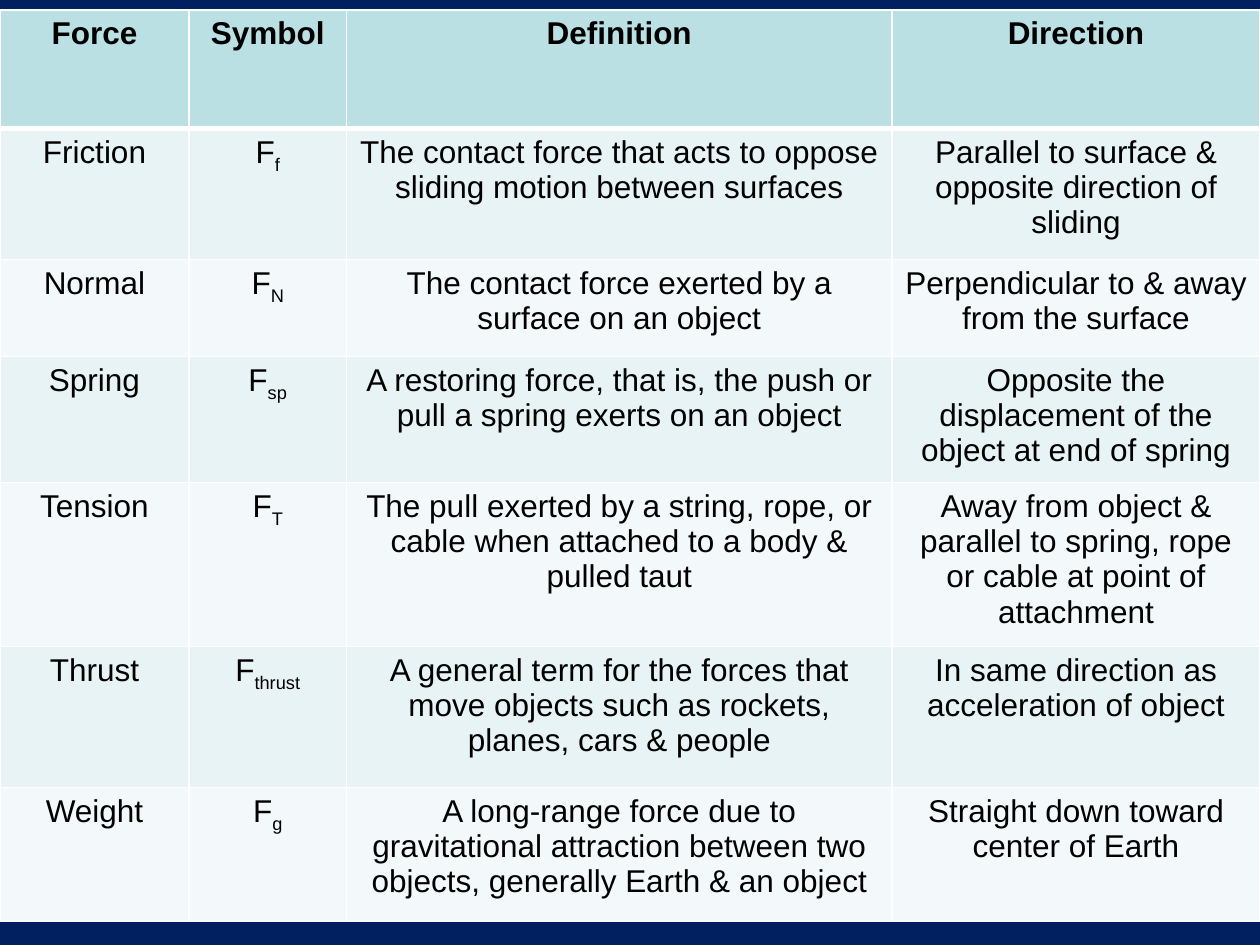
from lxml import etree
from pptx import Presentation, util as u
from pptx.dml.color import RGBColor
from pptx.enum import text
from pptx.oxml import ns

NAVY = RGBColor(0x00, 0x20, 0x60)
WHITE = RGBColor(0xFF, 0xFF, 0xFF)
BLACK = RGBColor(0x00, 0x00, 0x00)
HEADER_TEAL = RGBColor(0xBB, 0xE0, 0xE3)
BANDS = [RGBColor(0xE7, 0xF3, 0xF4), RGBColor(0xF3, 0xF9, 0xFA)]

FONT = "Arial"
FONT_SIZE = u.Pt(18)
TABLE_TOP = 0.08
COLUMNS = [1.5, 1.25, 4.33, 2.92]
ROWS = [0.94, 1.04, 0.77, 1, 1.3, 1.12, 1.06]

HEADERS = ["Force", "Symbol", "Definition", "Direction"]
# Force, subscript of its symbol, definition, direction
FORCES = [
    ("Friction", "f",
     "The contact force that acts to oppose sliding motion between surfaces",
     "Parallel to surface & opposite direction of sliding"),
    ("Normal", "N",
     "The contact force exerted by a surface on an object",
     "Perpendicular to & away from the surface"),
    ("Spring", "sp",
     "A restoring force, that is, the push or pull a spring exerts on an object",
     "Opposite the displacement of the object at end of spring"),
    ("Tension", "T",
     "The pull exerted by a string, rope, or cable when attached to a body & pulled taut",
     "Away from object & parallel to spring, rope or cable at point of attachment"),
    ("Thrust", "thrust",
     "A general term for the forces that move objects such as rockets, planes, cars & people",
     "In same direction as acceleration of object"),
    ("Weight", "g",
     "A long-range force due to gravitational attraction between two objects, "
     "generally Earth & an object",
     "Straight down toward center of Earth"),
]


def set_borders(cell, top, bottom):
    """Draw white borders, one point wide at the sides."""
    properties = cell._tc.get_or_add_tcPr()
    for side, points in (("L", 1), ("R", 1), ("T", top), ("B", bottom)):
        line = etree.SubElement(properties, ns.qn(f"a:ln{side}"), w=str(u.Pt(points)))
        fill = etree.SubElement(line, ns.qn("a:solidFill"))
        etree.SubElement(fill, ns.qn("a:srgbClr"), val=str(WHITE))


def fill_cell(cell, words, color, bold=False, subscript=None):
    """Write centred words, with an optional subscript, on a plain fill."""
    cell.fill.solid()
    cell.fill.fore_color.rgb = color
    paragraph = cell.text_frame.paragraphs[0]
    paragraph.text = words
    paragraph.alignment = text.PP_ALIGN.CENTER
    if subscript:
        run = paragraph.add_run()
        run.text = subscript
        run._r.get_or_add_rPr().set("baseline", "-25000")
    for run in paragraph.runs:
        run.font.name = FONT
        run.font.size = FONT_SIZE
        run.font.bold = bold
        run.font.color.rgb = BLACK


def add_force_table(slide):
    """Add the table with its column widths, row heights and borders."""
    frame = slide.shapes.add_table(
        len(ROWS), len(COLUMNS), 0, u.Inches(TABLE_TOP),
        u.Inches(sum(COLUMNS)), u.Inches(sum(ROWS)))
    table = frame.table
    for column, width in zip(table.columns, COLUMNS):
        column.width = u.Inches(width)
    for index, (row, height) in enumerate(zip(table.rows, ROWS)):
        row.height = u.Inches(height)
        for cell in row.cells:
            # A thick rule parts the header from the body
            set_borders(cell, top=3 if index == 1 else 1, bottom=3 if index == 0 else 1)
    return table


def main():
    presentation = Presentation()
    presentation.slide_width = u.Inches(10)
    presentation.slide_height = u.Inches(7.5)
    slide = presentation.slides.add_slide(presentation.slide_layouts[6])
    slide.background.fill.solid()
    slide.background.fill.fore_color.rgb = NAVY

    table = add_force_table(slide)

    # Header row
    for column, header in enumerate(HEADERS):
        fill_cell(table.cell(0, column), header, HEADER_TEAL, bold=True)

    # Banded body rows
    for row, (force, subscript, definition, direction) in enumerate(FORCES, start=1):
        color = BANDS[(row - 1) % 2]
        fill_cell(table.cell(row, 0), force, color)
        fill_cell(table.cell(row, 1), "F", color, subscript=subscript)
        fill_cell(table.cell(row, 2), definition, color)
        fill_cell(table.cell(row, 3), direction, color)

    presentation.save("out.pptx")


if __name__ == "__main__":
    main()
